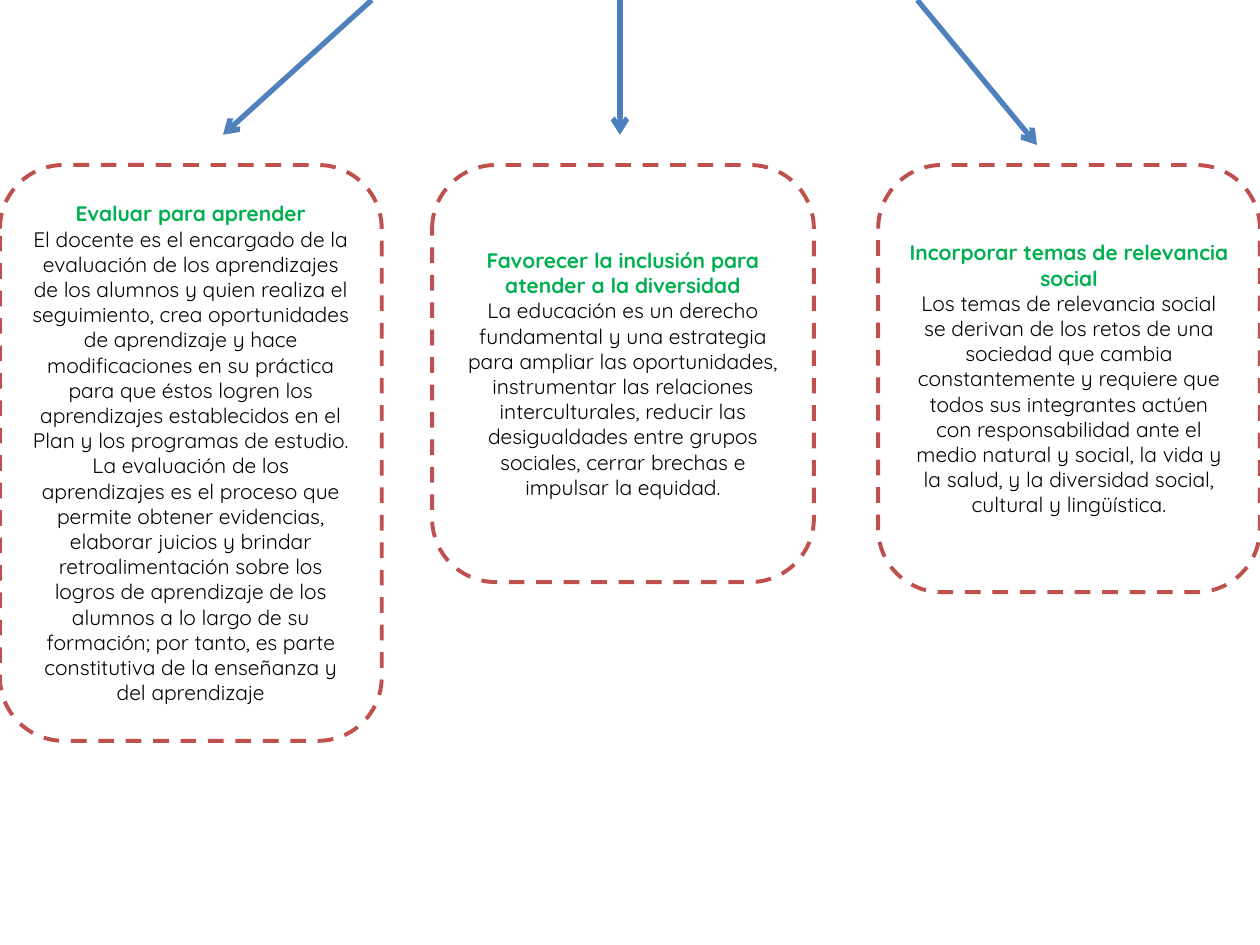
from lxml.etree import SubElement
from pptx import Presentation
from pptx.dml.color import RGBColor
from pptx.enum.dml import MSO_LINE
from pptx.enum.shapes import MSO_CONNECTOR, MSO_SHAPE
from pptx.enum.text import MSO_ANCHOR, PP_ALIGN
from pptx.oxml.ns import qn
from pptx.util import Inches, Pt

CARD_TOP, CARD_WIDTH = 1.31, 3.03

# left, height, heading, body
CARDS = [
    (0, 4.57, "Evaluar para aprender",
     "El docente es el encargado de la evaluación de los aprendizajes de los "
     "alumnos y quien realiza el seguimiento, crea oportunidades de aprendizaje "
     "y hace modificaciones en su práctica para que éstos logren los "
     "aprendizajes establecidos en el Plan y los programas de estudio. La "
     "evaluación de los aprendizajes es el proceso que permite obtener "
     "evidencias, elaborar juicios y brindar retroalimentación sobre los logros "
     "de aprendizaje de los alumnos a lo largo de su formación; por tanto, es "
     "parte constitutiva de la enseñanza y del aprendizaje"),
    (3.43, 3.31, "Favorecer la inclusión para atender a la diversidad",
     "La educación es un derecho fundamental y una estrategia para ampliar las "
     "oportunidades, instrumentar las relaciones interculturales, reducir las "
     "desigualdades entre grupos sociales, cerrar brechas e impulsar la "
     "equidad."),
    (6.97, 3.39, "Incorporar temas de relevancia social",
     "Los temas de relevancia social se derivan de los retos de una sociedad "
     "que cambia constantemente y requiere que todos sus integrantes actúen con "
     "responsabilidad ante el medio natural y social, la vida y la salud, y la "
     "diversidad social, cultural y lingüística."),
]

# start x, end x, end y, colour; every arrow starts at the top edge
ARROWS = [
    (4.92, 4.92, 1.07, "4B7EBC"),
    (2.95, 1.77, 1.07, "4F81BD"),
    (7.28, 8.23, 1.15, "4F81BD"),
]


def paint(color, value):
    color.rgb = RGBColor.from_string(value)


def add_arrow(slide, start, end, bottom, color):
    arrow = slide.shapes.add_connector(
        MSO_CONNECTOR.STRAIGHT, Inches(start), 0, Inches(end), Inches(bottom))
    arrow.line.width = Pt(3)
    paint(arrow.line.color, color)
    props = arrow.element.spPr
    SubElement(props.find(qn("a:ln")), qn("a:tailEnd"), type="arrow")
    SubElement(props, qn("a:effectLst"))


def add_card(slide, left, height, heading, body):
    card = slide.shapes.add_shape(
        MSO_SHAPE.ROUNDED_RECTANGLE, Inches(left), Inches(CARD_TOP),
        Inches(CARD_WIDTH), Inches(height))
    card.shadow.inherit = False
    card.fill.solid()
    paint(card.fill.fore_color, "FFFFFF")
    paint(card.line.color, "C0504D")
    card.line.width = Pt(2.25)
    card.line.dash_style = MSO_LINE.DASH

    frame = card.text_frame
    frame.word_wrap = True
    frame.vertical_anchor = MSO_ANCHOR.MIDDLE
    frame.text = f"{heading}\n{body}"
    for part, color, bold in zip(
            frame.paragraphs, ("00B050", "000000"), (True, False)):
        part.alignment = PP_ALIGN.CENTER
        font = part.runs[0].font
        font.name = "Quicksand"
        font.size = Pt(12)
        font.bold = bold
        paint(font.color, color)


def main():
    deck = Presentation()
    deck.slide_width, deck.slide_height = Inches(10), Inches(7.5)
    slide = deck.slides.add_slide(deck.slide_layouts.get_by_name("Blank"))
    for arrow in ARROWS:
        add_arrow(slide, *arrow)
    for card in CARDS:
        add_card(slide, *card)
    deck.save("out.pptx")


if __name__ == "__main__":
    main()
